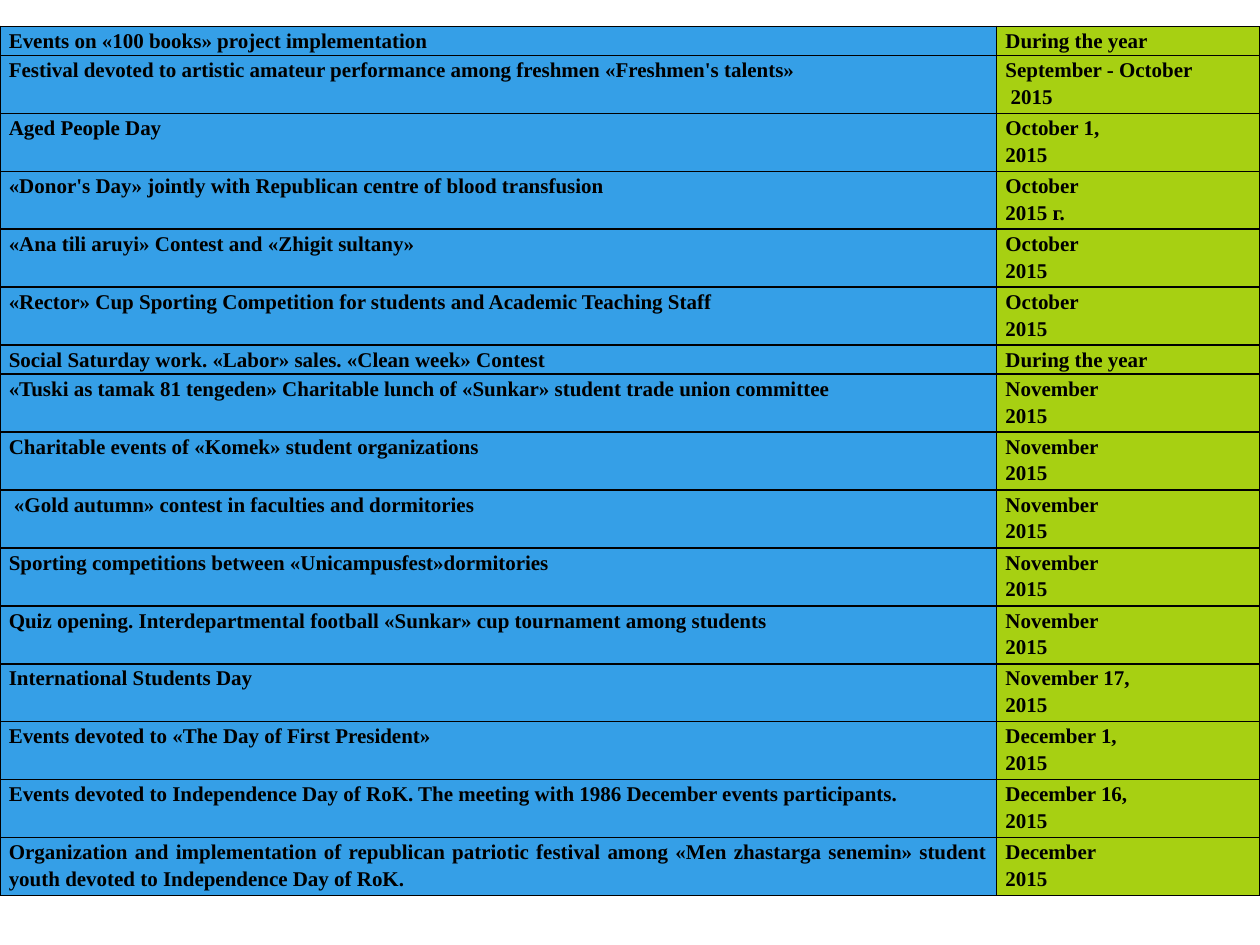
from lxml import etree
from pptx import Presentation
from pptx.dml.color import RGBColor
from pptx.enum.text import PP_ALIGN
from pptx.oxml.ns import qn
from pptx.util import Inches, Pt

LEFT = PP_ALIGN.LEFT
JUSTIFY = PP_ALIGN.JUSTIFY
COLORS = {"event": "359FE7", "date": "A7D012", "ink": "000000"}
SINGLE_ROW = 0.23
EVENTS = [
    ("Events on «100 books» project implementation", ["During the year"]),
    ("Festival devoted to artistic amateur performance among freshmen «Freshmen's talents»",
     ["September - October", " 2015"]),
    ("Aged People Day", ["October 1,", "2015"]),
    ("«Donor's Day» jointly with Republican centre of blood transfusion", ["October", "2015 г."]),
    ("«Ana tili aruyi» Contest and «Zhigit sultany»", ["October", "2015"]),
    ("«Rector» Cup Sporting Competition for students and Academic Teaching Staff",
     ["October", "2015"]),
    ("Social Saturday work. «Labor» sales. «Clean week» Contest", ["During the year"]),
    ("«Tuski as tamak 81 tengeden» Charitable lunch of «Sunkar» student trade union committee",
     ["November", "2015"]),
    ("Charitable events of «Komek» student organizations", ["November", "2015"]),
    (" «Gold autumn» contest in faculties and dormitories", ["November", "2015"]),
    ("Sporting competitions between «Unicampusfest»dormitories", ["November", "2015"]),
    ("Quiz opening. Interdepartmental football «Sunkar» cup tournament among students",
     ["November", "2015"]),
    ("International Students Day", ["November 17,", "2015"]),
    ("Events devoted to «The Day of First President»", ["December 1,", "2015"]),
    ("Events devoted to Independence Day of RoK. The meeting with 1986 December events participants.",
     ["December 16,", "2015"]),
    ("Organization and implementation of republican patriotic festival among "
     "«Men zhastarga senemin» student youth devoted to Independence Day of RoK.",
     ["December", "2015"]),
]


class SlideBuilder:
    """Hold the style and the current slide, and add elements to it."""

    def __init__(self, slide, font="Times New Roman", size=12):
        self.slide = slide
        self.font = font
        self.size = size

    def add_schedule(self, left, top, widths, events):
        heights = [SINGLE_ROW * len(dates) for _, dates in events]
        table = self.slide.shapes.add_table(
            len(events), len(widths), Inches(left), Inches(top),
            Inches(sum(widths)), Inches(sum(heights))).table
        table.first_row = table.horz_banding = False
        for column, width in zip(table.columns, widths):
            column.width = Inches(width)
        for row, height, (event, dates) in zip(table.rows, heights, events):
            row.height = Inches(height)
            self.fill_cell(row.cells[0], [event], "event", JUSTIFY)
            self.fill_cell(row.cells[1], dates, "date", LEFT)

    def fill_cell(self, cell, lines, color, alignment):
        cell.margin_left = cell.margin_right = Inches(0.07)
        cell.margin_top = cell.margin_bottom = 0
        self.add_borders(cell)
        cell.fill.solid()
        cell.fill.fore_color.rgb = RGBColor.from_string(COLORS[color])
        frame = cell.text_frame
        for index, line in enumerate(lines):
            paragraph = frame.add_paragraph() if index else frame.paragraphs[0]
            paragraph.alignment = alignment
            paragraph.line_spacing = 1.15
            run = paragraph.add_run()
            run.text = line
            run.font.name = self.font
            run.font.size = Pt(self.size)
            run.font.bold = True
            run.font.color.rgb = RGBColor.from_string(COLORS["ink"])

    def add_borders(self, cell):
        properties = cell._tc.get_or_add_tcPr()
        for side in ("a:lnL", "a:lnR", "a:lnT", "a:lnB"):
            line = etree.SubElement(properties, qn(side), w=str(Pt(1)))
            fill = etree.SubElement(line, qn("a:solidFill"))
            etree.SubElement(fill, qn("a:srgbClr"), val=COLORS["ink"])


def main():
    presentation = Presentation()
    presentation.slide_width = Inches(10)
    presentation.slide_height = Inches(7.5)
    slide = presentation.slides.add_slide(presentation.slide_layouts[6])
    SlideBuilder(slide).add_schedule(0, 0.21, [7.91, 2.09], EVENTS)
    presentation.save("out.pptx")


if __name__ == "__main__":
    main()
